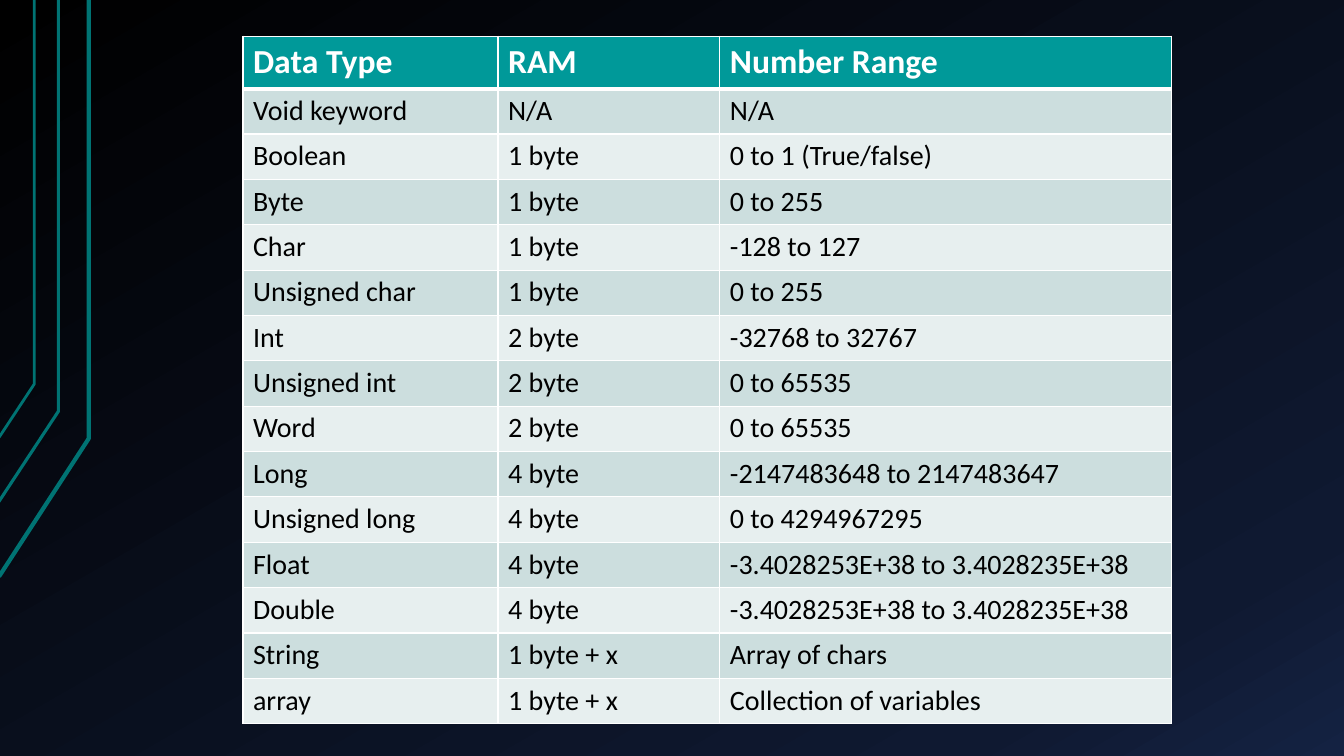
import copy

import lxml.etree
import pptx
import pptx.dml.color
import pptx.oxml.ns
import pptx.util

Inches = pptx.util.Inches
Pt = pptx.util.Pt

FONT = "Calibri"
WHITE, BLACK = "FFFFFF", "000000"
HEADER_FILL = "009999"
BAND_FILLS = ["CCDEDE", "E7EFEF"]
CIRCUIT_COLOR = "007373"
BACKGROUND_STOPS = [(0, "000000"), (0.85, "0F1931"), (1, "142242")]

# Each circuit line: points in inches, then width in points
CIRCUIT_LINES = [
    ([(-0.01, 5.72), (0.88, 4.35), (0.88, 0)], 3),
    ([(-0.02, 4.99), (0.58, 4.08), (0.58, 0)], 2.25),
    ([(-0.01, 4.34), (0.34, 3.81), (0.34, 0)], 2),
]

COLUMN_WIDTHS = [2.53, 2.2, 4.48]
HEADER_HEIGHT, ROW_HEIGHT = 0.52, 0.45
DATA_TYPES = [
    ("Data Type", "RAM", "Number Range"),
    ("Void keyword", "N/A", "N/A"),
    ("Boolean", "1 byte", "0 to 1 (True/false)"),
    ("Byte", "1 byte", "0 to 255"),
    ("Char", "1 byte", "-128 to 127"),
    ("Unsigned char", "1 byte", "0 to 255"),
    ("Int", "2 byte", "-32768 to 32767"),
    ("Unsigned int", "2 byte", "0 to 65535"),
    ("Word", "2 byte", "0 to 65535"),
    ("Long", "4 byte", "-2147483648 to 2147483647"),
    ("Unsigned long", "4 byte", "0 to 4294967295"),
    ("Float", "4 byte", "-3.4028253E+38 to 3.4028235E+38"),
    ("Double", "4 byte", "-3.4028253E+38 to 3.4028235E+38"),
    ("String", "1 byte + x", "Array of chars"),
    ("array", "1 byte + x", "Collection of variables"),
]


def rgb(value):
    return pptx.dml.color.RGBColor.from_string(value)


def set_background(s):
    fill = s.background.fill
    fill.gradient()
    fill.gradient_angle = 300
    # The default gradient has two stops; add a third
    stops = s.background._cSld.find(".//" + pptx.oxml.ns.qn("a:gsLst"))
    stops.append(copy.deepcopy(stops[-1]))
    for stop, (position, color) in zip(fill.gradient_stops, BACKGROUND_STOPS):
        stop.position = position
        stop.color.rgb = rgb(color)


def add_circuit_line(s, points, width):
    (x, y), *rest = [(Inches(px), Inches(py)) for px, py in points]
    builder = s.shapes.build_freeform(x, y)
    builder.add_line_segments(rest, close=False)
    sp = builder.convert_to_shape()
    sp.shadow.inherit = False
    sp.fill.background()
    sp.line.color.rgb = rgb(CIRCUIT_COLOR)
    sp.line.width = Pt(width)


def set_border(cell, side, width):
    qn = pptx.oxml.ns.qn
    tcPr = cell._tc.get_or_add_tcPr()
    ln = lxml.etree.SubElement(tcPr, qn("a:ln" + side), w=str(Pt(width)))
    fill = lxml.etree.SubElement(ln, qn("a:solidFill"))
    lxml.etree.SubElement(fill, qn("a:srgbClr"), val=WHITE)


def fill_cell(cell, text, row):
    header = row == 0
    # Borders: the rule under the header is heavier
    for side in "LRTB":
        heavy = (header and side == "B") or (row == 1 and side == "T")
        set_border(cell, side, 3 if heavy else 1)
    cell.fill.solid()
    cell.fill.fore_color.rgb = rgb(HEADER_FILL if header else BAND_FILLS[(row - 1) % 2])
    p = cell.text_frame.paragraphs[0]
    p.text = text
    p.font.name = FONT
    p.font.size = Pt(24 if header else 20)
    p.font.bold = header
    p.font.color.rgb = rgb(WHITE if header else BLACK)


def add_data_table(s, left, top):
    heights = [HEADER_HEIGHT] + [ROW_HEIGHT] * (len(DATA_TYPES) - 1)
    table = s.shapes.add_table(
        len(heights), len(COLUMN_WIDTHS), Inches(left), Inches(top),
        Inches(sum(COLUMN_WIDTHS)), Inches(sum(heights))).table
    for column, width in zip(table.columns, COLUMN_WIDTHS):
        column.width = Inches(width)
    for i, (height, texts) in enumerate(zip(heights, DATA_TYPES)):
        table.rows[i].height = Inches(height)
        for j, text in enumerate(texts):
            fill_cell(table.cell(i, j), text, i)


def main():
    prs = pptx.Presentation()
    prs.slide_width = Inches(13.33)
    prs.slide_height = Inches(7.5)
    s = prs.slides.add_slide(prs.slide_layouts[6])

    # Backdrop
    set_background(s)
    for points, width in CIRCUIT_LINES:
        add_circuit_line(s, points, width)

    # Data types
    add_data_table(s, 2.41, 0.36)

    prs.save("out.pptx")


if __name__ == "__main__":
    main()
